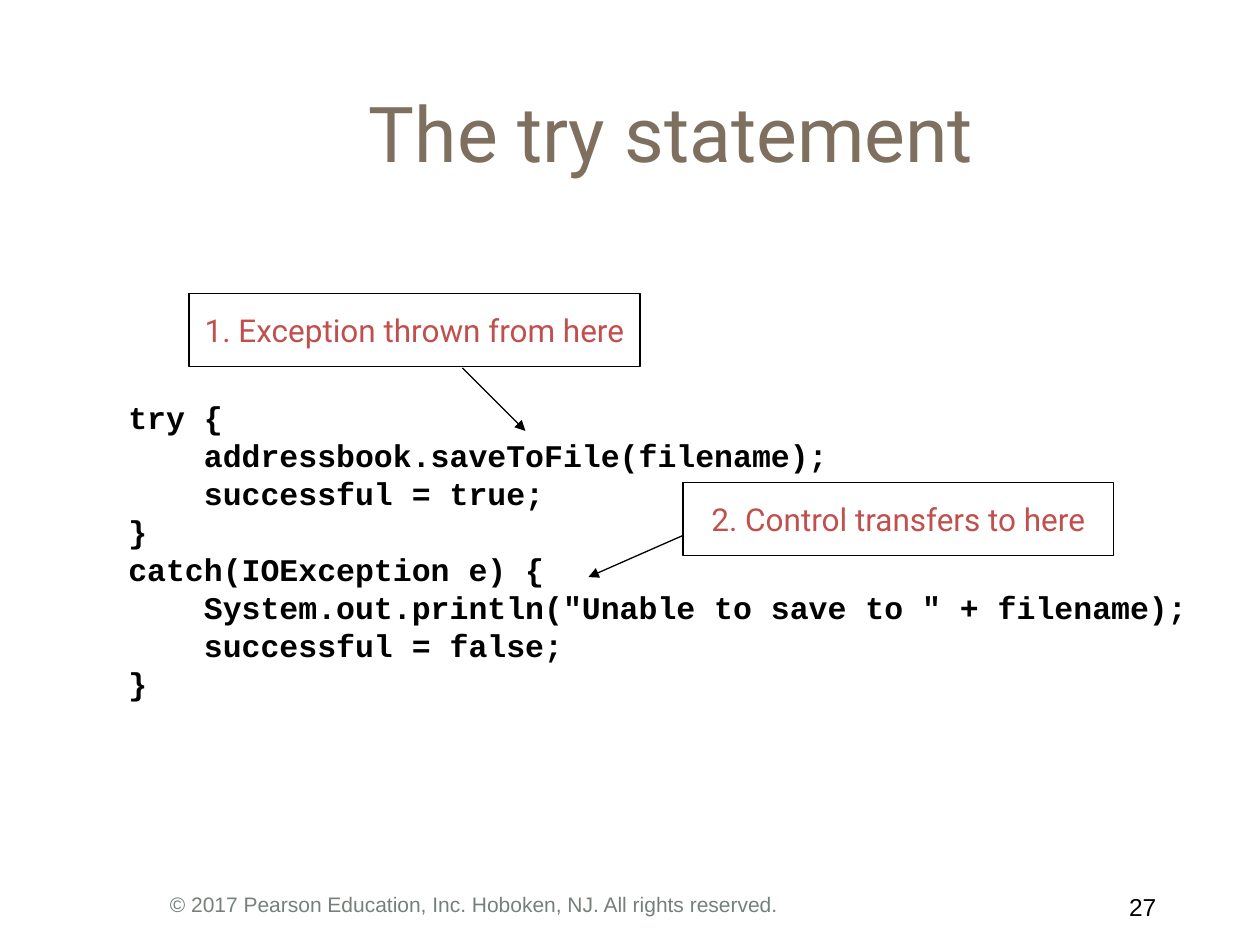
from pptx import Presentation
from pptx.dml.color import RGBColor
from pptx.enum.shapes import MSO_CONNECTOR, MSO_SHAPE
from pptx.enum.text import MSO_ANCHOR, PP_ALIGN
from pptx.oxml.ns import qn
from pptx.util import Inches, Pt
from lxml import etree

LEFT, CENTER, RIGHT = PP_ALIGN.LEFT, PP_ALIGN.CENTER, PP_ALIGN.RIGHT
TOP, MIDDLE = MSO_ANCHOR.TOP, MSO_ANCHOR.MIDDLE
RECTANGLE = MSO_SHAPE.RECTANGLE
STRAIGHT = MSO_CONNECTOR.STRAIGHT
TITLE_ONLY = 5

BLACK, BROWN, RED, GRAY = "000000", "7F6F5E", "C0504D", "76807A"

CODE = """try {
    addressbook.saveToFile(filename);
    successful = true;
}
catch(IOException e) {
    System.out.println("Unable to save to " + filename);
    successful = false;
}"""

CALLOUTS = [
    ("1. Exception thrown from here", (1.5, 2.33, 3.58, 0.58), (3.67, 2.92), (4.17, 3.42)),
    ("2. Control transfers to here", (5.42, 3.83, 3.42, 0.58), (5.42, 4.25), (4.67, 4.58)),
]


def inches(values):
    """Convert a sequence of numbers to lengths."""
    return [Inches(value) for value in values]


def paint(color_format, color):
    """Set a colour from a hex string."""
    color_format.rgb = RGBColor.from_string(color)


def write(holder, text, font="Arial", size=18, color=BLACK, bold=False,
          align=LEFT, anchor=TOP, wrap=True, spacing=None):
    """Fill a shape with formatted text, one paragraph for each line."""
    frame = holder.text_frame
    frame.text = text
    frame.word_wrap = wrap
    frame.vertical_anchor = anchor
    for paragraph in frame.paragraphs:
        paragraph.alignment = align
        paragraph.line_spacing = spacing
        paragraph.font.name = font
        paragraph.font.size = Pt(size)
        paragraph.font.bold = bold
        paint(paragraph.font.color, color)


def add_title(slide, box, text):
    """Move and format the title placeholder."""
    title = slide.shapes.title
    title.left, title.top, title.width, title.height = inches(box)
    write(title, text, font="Roboto", size=44, color=BROWN, align=CENTER, anchor=MIDDLE)


def add_text(slide, box, text, **text_format):
    """Add a text box."""
    write(slide.shapes.add_textbox(*inches(box)), text, **text_format)


def add_callout(slide, box, text, start, end):
    """Add an outlined label and the arrow leading from it into the code."""
    label = slide.shapes.add_shape(RECTANGLE, *inches(box))
    label.shadow.inherit = False
    label.fill.background()
    write(label, text, font="Roboto", color=RED, align=CENTER, anchor=MIDDLE, wrap=False)
    arrow = slide.shapes.add_connector(STRAIGHT, *inches(start + end))
    for outline in (label.line, arrow.line):
        paint(outline.color, BLACK)
        outline.width = Pt(0.75)
    etree.SubElement(arrow.line._get_or_add_ln(), qn("a:tailEnd"), type="triangle")
    etree.SubElement(arrow._element.spPr, qn("a:effectLst"))


def add_footer(slide, top, height):
    """Add the copyright line and the slide number."""
    add_text(slide, (1.25, top, 7.58, height),
             "© 2017 Pearson Education, Inc. Hoboken, NJ. All rights reserved.",
             size=12, color=GRAY)
    add_text(slide, (8.75, top, 0.58, height), "27 ", size=14, align=RIGHT)


def main():
    """Build and save the slide."""
    deck = Presentation()
    deck.slide_width, deck.slide_height = Inches(10), Inches(7.5)
    slide = deck.slides.add_slide(deck.slide_layouts[TITLE_ONLY])
    add_title(slide, (1.08, 0.42, 8.5, 1.25), "The try statement")
    add_text(slide, (0.92, 3.11, 8.6, 2.8), CODE, font="Courier New", bold=True,
             wrap=False, spacing=Pt(21.7))
    for text, box, start, end in CALLOUTS:
        add_callout(slide, box, text, start, end)
    add_footer(slide, 7.03, 0.33)
    deck.save("out.pptx")


if __name__ == "__main__":
    main()
